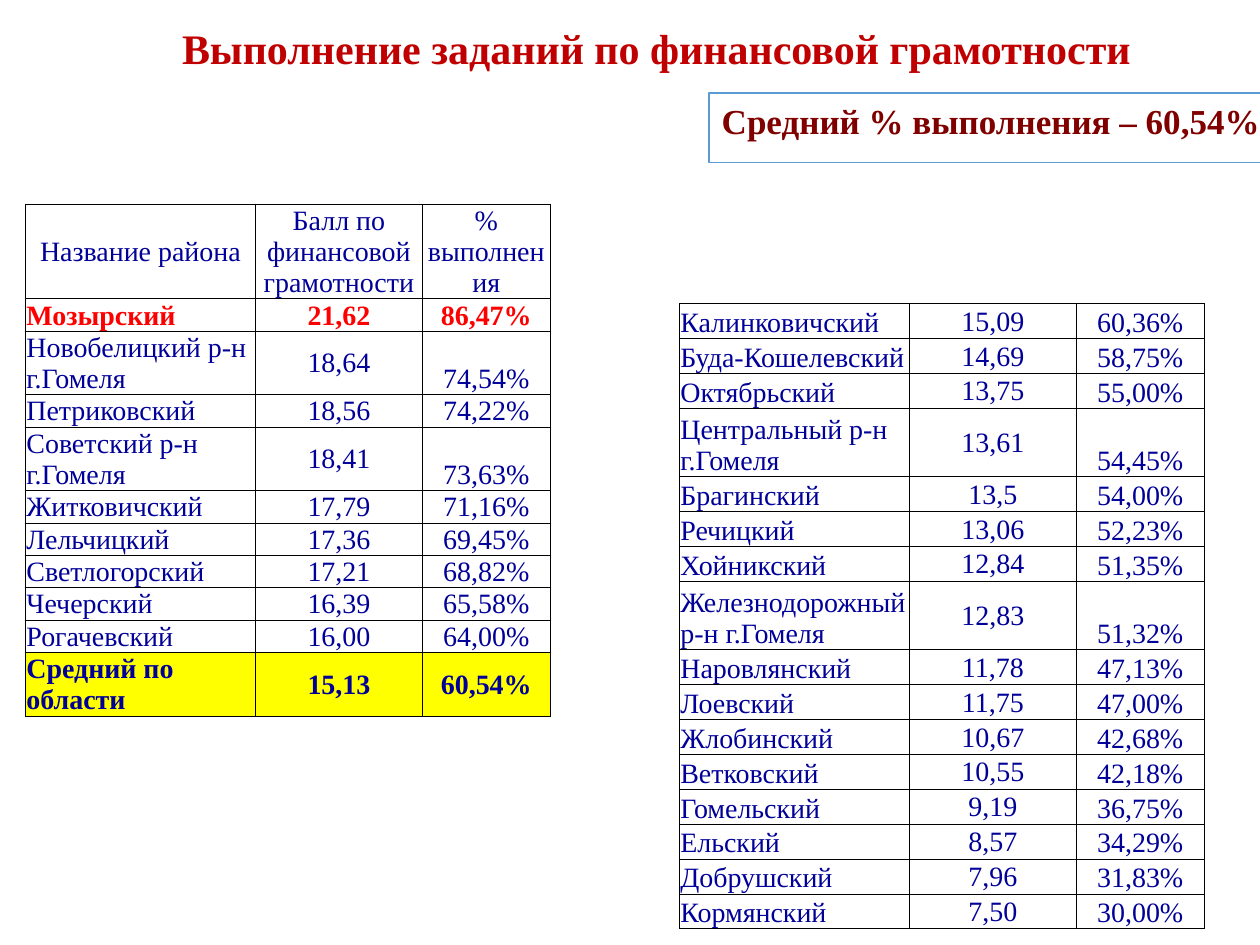
from lxml.etree import SubElement
from pptx import Presentation
from pptx.dml.color import RGBColor
from pptx.enum.shapes import MSO_SHAPE as SHAPE
from pptx.enum.text import MSO_ANCHOR as ANCHOR, MSO_AUTO_SIZE as AUTO, PP_ALIGN as ALIGN
from pptx.oxml.ns import qn
from pptx.util import Inches, Pt

COLORS = {
    "title": "C00000", "average": "800000", "text": "000099", "leader": "FF0000",
    "white": "FFFFFF", "highlight": "FFFF00", "border": "000000", "accent": "5B9BD5",
}
FONT = "Times New Roman"
COLUMNS = (1.83, 1.32, 1.02)
HEADER = ("Название района", "Балл по финансовой грамотности", "% выполнения")
LEADER = "Мозырский"
AVERAGE = "Средний по области"
UPPER = [
    (LEADER, "21,62", "86,47%"),
    ("Новобелицкий р-н г.Гомеля", "18,64", "74,54%"),
    ("Петриковский", "18,56", "74,22%"),
    ("Советский р-н г.Гомеля", "18,41", "73,63%"),
    ("Житковичский", "17,79", "71,16%"),
    ("Лельчицкий", "17,36", "69,45%"),
    ("Светлогорский", "17,21", "68,82%"),
    ("Чечерский", "16,39", "65,58%"),
    ("Рогачевский", "16,00", "64,00%"),
    (AVERAGE, "15,13", "60,54%"),
]
LOWER = [
    ("Калинковичский", "15,09", "60,36%"),
    ("Буда-Кошелевский", "14,69", "58,75%"),
    ("Октябрьский", "13,75", "55,00%"),
    ("Центральный р-н г.Гомеля", "13,61", "54,45%"),
    ("Брагинский", "13,5", "54,00%"),
    ("Речицкий", "13,06", "52,23%"),
    ("Хойникский", "12,84", "51,35%"),
    ("Железнодорожный р-н г.Гомеля", "12,83", "51,32%"),
    ("Наровлянский", "11,78", "47,13%"),
    ("Лоевский", "11,75", "47,00%"),
    ("Жлобинский", "10,67", "42,68%"),
    ("Ветковский", "10,55", "42,18%"),
    ("Гомельский", "9,19", "36,75%"),
    ("Ельский", "8,57", "34,29%"),
    ("Добрушский", "7,96", "31,83%"),
    ("Кормянский", "7,50", "30,00%"),
]


def rgb(name):
    """Return the named colour."""
    return RGBColor.from_string(COLORS[name])


def write(tf, text, size, color, bold, align):
    """Write one styled run into the first paragraph."""
    p = tf.paragraphs[0]
    p.alignment = align
    r = p.add_run()
    r.text = text
    r.font.name, r.font.size, r.font.bold = FONT, Pt(size), bold
    r.font.color.rgb = rgb(color)


def add_borders(cell):
    """Draw a thin line on all four sides of a cell."""
    tc_pr = cell._tc.get_or_add_tcPr()
    for side in ("lnL", "lnR", "lnT", "lnB"):
        ln = SubElement(tc_pr, qn(f"a:{side}"), w=str(Pt(0.5)))
        fill = SubElement(ln, qn("a:solidFill"))
        SubElement(fill, qn("a:srgbClr"), val=COLORS["border"])


def fill_cell(cell, text, column, name):
    """Style one cell by its column and the name of its row."""
    is_header, is_average = name == HEADER[0], name == AVERAGE
    cell.margin_left = cell.margin_right = cell.margin_top = Inches(0.01)
    cell.margin_bottom = 0
    middle = is_header or column == 1 or (is_average and column == 2)
    cell.vertical_anchor = ANCHOR.MIDDLE if middle else ANCHOR.BOTTOM
    add_borders(cell)
    if is_header:
        cell.fill.background()
    else:
        cell.fill.solid()
        cell.fill.fore_color.rgb = rgb("highlight" if is_average else "white")
    write(cell.text_frame, text, 16, "leader" if name == LEADER else "text",
          name in (LEADER, AVERAGE), ALIGN.CENTER if is_header or column else ALIGN.LEFT)


def add_scores(s, rows, x, y, h, double, header=0):
    """Add a score table whose single-line rows share the remaining height."""
    tall = sum(" " in row[0] for row in rows)
    single = (h - header - tall * double) / (len(rows) - tall)
    heights = [double if " " in row[0] else single for row in rows]
    if header:
        rows, heights = [HEADER] + rows, [header] + heights
    table = s.shapes.add_table(len(rows), len(COLUMNS), Inches(x), Inches(y),
                               Inches(sum(COLUMNS)), Inches(h)).table
    table.first_row = table.horz_banding = False
    for column, width in zip(table.columns, COLUMNS):
        column.width = Inches(width)
    for i, (row, height) in enumerate(zip(rows, heights)):
        table.rows[i].height = Inches(height)
        for j, text in enumerate(row):
            fill_cell(table.cell(i, j), text, j, row[0])


def add_title(s, x, y, w, h):
    """Add the centred slide title."""
    tf = s.shapes.add_textbox(Inches(x), Inches(y), Inches(w), Inches(h)).text_frame
    tf.word_wrap = False
    tf.auto_size = AUTO.SHAPE_TO_FIT_TEXT
    write(tf, "Выполнение заданий по финансовой грамотности", 24, "title", True, ALIGN.CENTER)


def add_average(s, x, y, w, h):
    """Add the framed average result."""
    sp = s.shapes.add_shape(SHAPE.RECTANGLE, Inches(x), Inches(y), Inches(w), Inches(h))
    sp.shadow.inherit = False
    sp.fill.solid()
    sp.fill.fore_color.rgb = rgb("white")
    sp.line.color.rgb = rgb("accent")
    sp.line.width = Pt(1)
    tf = sp.text_frame
    tf.word_wrap = True
    tf.vertical_anchor = ANCHOR.TOP
    write(tf, "Средний % выполнения – 60,54%", 20, "average", True, ALIGN.LEFT)


def main():
    """Build and save the slide."""
    prs = Presentation()
    prs.slide_width, prs.slide_height = Inches(10), Inches(7.5)
    s = prs.slides.add_slide(prs.slide_layouts[6])
    add_scores(s, UPPER, 0.2, 1.62, 4.04, double=0.5, header=0.75)
    add_title(s, 1.22, 0.13, 7.98, 0.5)
    add_scores(s, LOWER, 5.39, 2.41, 4.93, double=0.54)
    add_average(s, 5.63, 0.74, 4.47, 0.55)
    prs.save("out.pptx")


if __name__ == "__main__":
    main()
